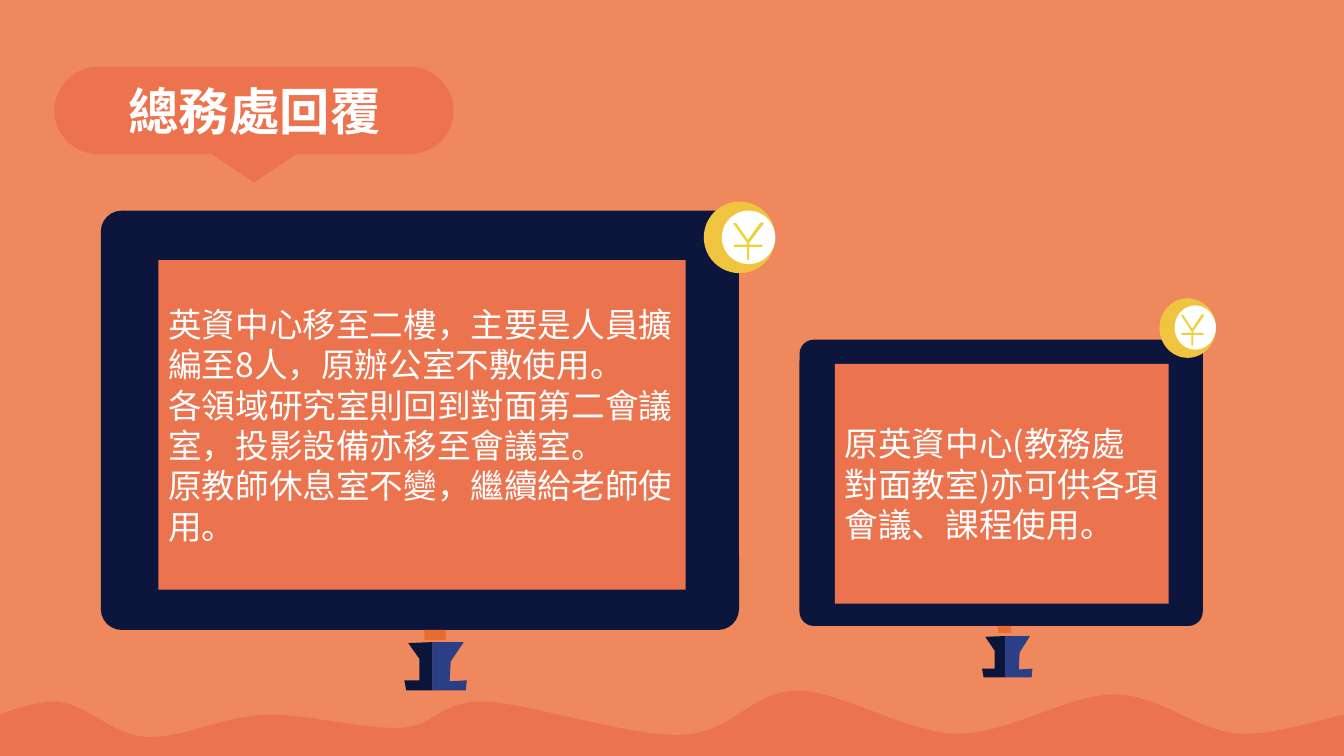
from lxml.etree import SubElement
from pptx import Presentation
from pptx.dml.color import RGBColor
from pptx.enum.shapes import MSO_SHAPE as Preset
from pptx.enum.text import MSO_ANCHOR as Anchor, MSO_AUTO_SIZE as AutoSize, PP_ALIGN as Align
from pptx.oxml.ns import qn
from pptx.util import Pt

PX = 9144
CURVE_STEPS = 16
FONT = "Noto Sans CJK SC"

PEACH = RGBColor(0xEF, 0x88, 0x5D)
CORAL = RGBColor(0xEB, 0x73, 0x4E)
BUBBLE = RGBColor(0xEC, 0x73, 0x4E)
NAVY = RGBColor(0x0C, 0x15, 0x3C)
STAND_DARK = RGBColor(0x0A, 0x16, 0x39)
STAND_BLUE = RGBColor(0x2A, 0x3F, 0x86)
NECK = RGBColor(0xE8, 0x6B, 0x2F)
GOLD = RGBColor(0xEF, 0xC5, 0x3F)
YEN = RGBColor(0xED, 0xD2, 0x39)
WHITE = RGBColor(0xFF, 0xFF, 0xFF)

STAND_LEFT = [(100, 0), (100, 100), (7, 100), (0, 79), (54, 79), (54, 35), (14, 2)]
STAND_RIGHT = [(0, 0), (91, 0), (53, 40), (50, 81), (100, 79), (97, 100), (0, 100)]
YEN_SIGN = [(87, 0), (100, 0), (52, 54), (52, 59), (94, 59), (94, 65), (52, 65),
            (52, 100), (45, 100), (45, 65), (3, 65), (3, 59), (45, 59), (45, 54),
            (0, 1), (10, 1), (48, 46)]

BUBBLE_PATH = [
    (98, 66), (406, 66),
    (430, 66, 450, 86, 450, 110), (450, 134, 430, 153, 406, 153),
    (294, 153), (252, 181), (210, 153), (98, 153),
    (74, 153, 54, 134, 54, 110), (54, 86, 74, 66, 98, 66),
]
WAVE_PATH = [
    (790, 685),
    (835, 685, 897, 727, 949, 728), (1002, 728, 1058, 689, 1105, 689),
    (1152, 689, 1185, 725, 1230, 728), (1258, 729, 1297, 718, 1328, 710),
    (1333, 709), (1333, 756), (0, 756), (0, 709), (11, 705),
    (25, 700, 38, 697, 51, 696), (85, 695, 109, 729, 145, 731),
    (180, 733, 220, 711, 263, 709), (305, 708, 361, 724, 398, 722),
    (434, 720, 435, 695, 481, 696), (527, 698, 624, 731, 675, 729),
    (727, 728, 744, 686, 790, 685),
]


def write(text_frame, text, size=24, bold=False, align=Align.LEFT):
    for index, line in enumerate(text):
        paragraph = text_frame.add_paragraph() if index else text_frame.paragraphs[0]
        paragraph.text = line
        paragraph.alignment = align
        for run in paragraph.runs:
            run.font.size = Pt(size)
            run.font.bold = bold
            run.font.name = FONT
            run.font.color.rgb = WHITE
            SubElement(run._r.get_or_add_rPr(), qn("a:ea")).set("typeface", FONT)


def flatten(path):
    points = [path[0]]
    for step in path[1:]:
        if len(step) == 2:
            points.append(step)
            continue
        controls = [points[-1], step[:2], step[2:4], step[4:]]
        for count in range(1, CURVE_STEPS + 1):
            t = count / CURVE_STEPS
            weights = ((1 - t) ** 3, 3 * t * (1 - t) ** 2, 3 * t * t * (1 - t), t ** 3)
            points.append(tuple(sum(weight * control[axis] for weight, control in zip(weights, controls))
                                for axis in (0, 1)))
    return points


class SlideArtist:
    def __init__(self, slide):
        self.slide = slide
        slide.background.fill.solid()
        slide.background.fill.fore_color.rgb = PEACH

    def paint(self, shape, color):
        shape.shadow.inherit = False
        shape.fill.solid()
        shape.fill.fore_color.rgb = color
        shape.line.fill.background()
        return shape

    def preset(self, kind, box, color):
        return self.paint(self.slide.shapes.add_shape(kind, *(value * PX for value in box)), color)

    def outline(self, points, color):
        corners = [(x * PX, y * PX) for x, y in points]
        builder = self.slide.shapes.build_freeform(*corners[0], scale=1.0)
        builder.add_line_segments(corners[1:], close=True)
        return self.paint(builder.convert_to_shape(), color)

    def fitted(self, percents, box, color):
        left, top, width, height = box
        self.outline([(left + x * width / 100, top + y * height / 100) for x, y in percents], color)

    def screen(self, box, text):
        text_frame = self.preset(Preset.RECTANGLE, box, CORAL).text_frame
        text_frame.word_wrap = True
        text_frame.vertical_anchor = Anchor.MIDDLE
        write(text_frame, text)

    def coin(self, rim, face, sign):
        self.preset(Preset.OVAL, rim, GOLD)
        self.preset(Preset.OVAL, face, WHITE)
        self.fitted(YEN_SIGN, sign, YEN)

    def monitor(self, stand_left, stand_right, frame, screen, text, coin, neck):
        self.fitted(STAND_LEFT, stand_left, STAND_DARK)
        self.fitted(STAND_RIGHT, stand_right, STAND_BLUE)
        self.preset(Preset.ROUNDED_RECTANGLE, frame, NAVY).adjustments[0] = 0.05
        self.screen(screen, text)
        self.coin(*coin)
        self.preset(Preset.RECTANGLE, neck, NECK)

    def title(self, box, text):
        text_box = self.slide.shapes.add_textbox(*(value * PX for value in box))
        text_box.text_frame.word_wrap = True
        text_box.text_frame.auto_size = AutoSize.SHAPE_TO_FIT_TEXT
        write(text_box.text_frame, [text], size=36, bold=True, align=Align.CENTER)


def main():
    presentation = Presentation()
    presentation.slide_width = 1333 * PX
    presentation.slide_height = 750 * PX
    artist = SlideArtist(presentation.slides.add_slide(presentation.slide_layouts[6]))

    artist.monitor(
        stand_left=(401, 637, 28, 48), stand_right=(429, 637, 34, 48),
        frame=(100, 209, 633, 416), screen=(157, 258, 523, 327),
        text=["英資中心移至二樓，主要是人員擴編至8人，原辦公室不敷使用。",
              "各領域研究室則回到對面第二會議室，投影設備亦移至會議室。",
              "原教師休息室不變，繼續給老師使用。"],
        coin=((698, 200, 71, 71), (716, 209, 53, 53), (727, 221, 31, 37)),
        neck=(421, 625, 21, 10),
    )
    artist.outline(flatten(BUBBLE_PATH), BUBBLE)
    artist.outline(flatten(WAVE_PATH), CORAL)
    artist.title((42, 75, 421, 71), "總務處回覆")
    artist.monitor(
        stand_left=(974, 631, 23, 41), stand_right=(997, 631, 27, 41),
        frame=(793, 337, 400, 284), screen=(828, 361, 331, 238),
        text=["原英資中心(教務處\n對面教室)亦可供各項\n會議、課程使用。"],
        coin=((1150, 296, 56, 59), (1165, 303, 41, 44), (1171, 312, 24, 31)),
        neck=(990, 621, 13, 7),
    )
    presentation.save("out.pptx")


if __name__ == "__main__":
    main()
